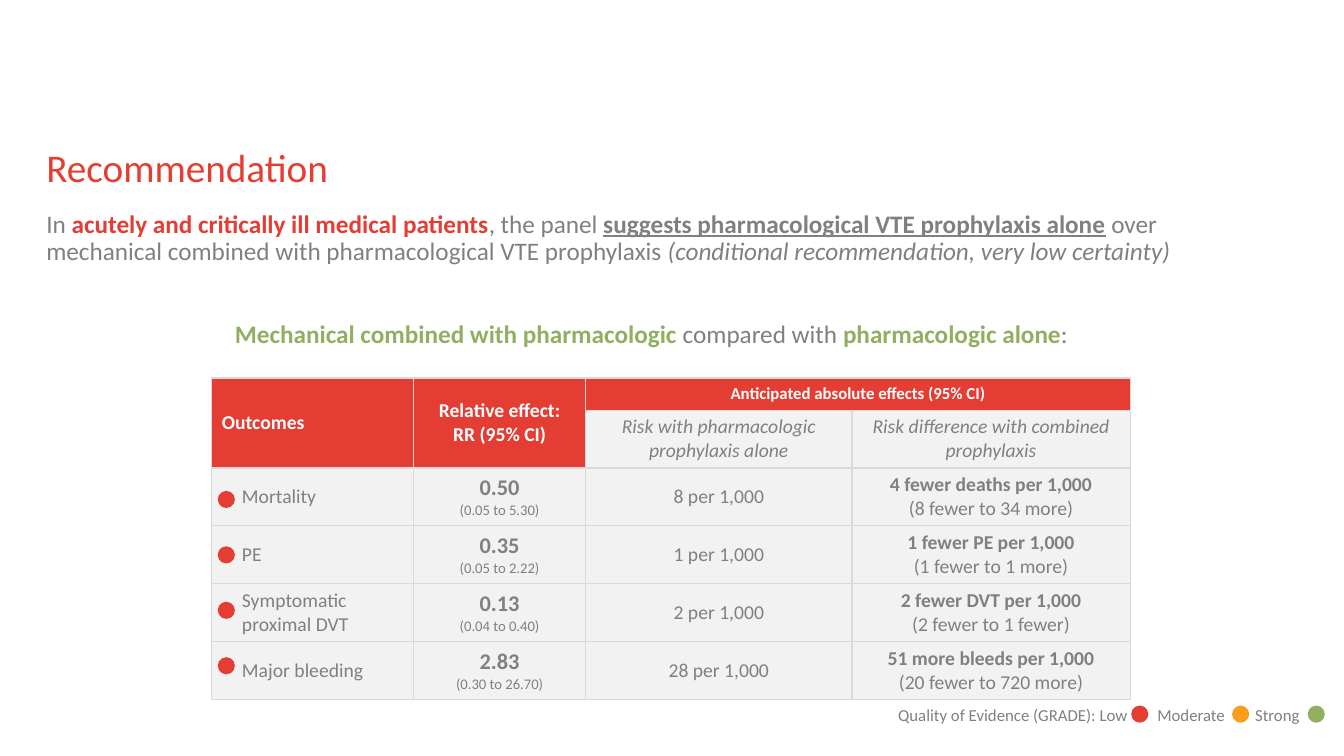
from lxml import etree
from pptx import Presentation
from pptx import util as u
from pptx.dml.color import RGBColor
from pptx.enum import shapes, text
from pptx.oxml import ns

COLORS = {"red": "E43D33", "title": "E53E31", "grey": "808080", "green": "91AF61",
          "white": "FFFFFF", "panel": "F2F2F2", "border": "D9D9D9",
          "low": "E43E32", "moderate": "F99D1C", "strong": "91AF5F"}
FONT = "Calibri"

TITLE = "Recommendation"
STATEMENT = [
    ("In ", "grey", ""),
    ("acutely and critically ill medical patients", "red", "b"),
    (", the panel ", "grey", ""),
    ("suggests pharmacological VTE prophylaxis alone", "grey", "bu"),
    (" over mechanical combined with pharmacological VTE prophylaxis ", "grey", ""),
    ("(conditional recommendation, very low certainty)", "grey", "i"),
]
COMPARISON = [
    ("Mechanical combined with pharmacologic ", "green", "b"),
    ("compared with ", "grey", ""),
    ("pharmacologic alone", "green", "b"),
    (":", "grey", ""),
]
HEADINGS = [
    (0, 0, ["Outcomes"], 14),
    (0, 1, ["Relative effect:", "RR (95% CI)"], 14),
    (0, 2, ["Anticipated absolute effects (95% CI)"], 12),
]
SUBHEADINGS = ["Risk with pharmacologic prophylaxis alone",
               "Risk difference with combined prophylaxis"]
OUTCOMES = [
    ("Mortality", "0.50", "(0.05 to 5.30)", "8 per 1,000",
     "4 fewer deaths per 1,000", "(8 fewer to 34 more)"),
    ("PE", "0.35", "(0.05 to 2.22)", "1 per 1,000",
     "1 fewer PE per 1,000", "(1 fewer to 1 more)"),
    ("Symptomatic proximal DVT", "0.13", "(0.04 to 0.40)", "2 per 1,000",
     "2 fewer DVT per 1,000", "(2 fewer to 1 fewer)"),
    ("Major bleeding", "2.83", "(0.30 to 26.70)", "28 per 1,000",
     "51 more bleeds per 1,000", "(20 fewer to 720 more)"),
]
LEGEND = "Quality of Evidence (GRADE): Low\tModerate\tStrong"
LEGEND_TABS = [2.57, 3.54]
LEGEND_DOTS = [("low", 11.22), ("moderate", 12.22), ("strong", 12.97)]

MARGIN, CONTENT_WIDTH = 0.46, 12
TABLE_LEFT, TABLE_TOP = 2.1, 3.75
COLUMNS = [2, 1.71, 2.64, 2.76]
ROWS = [0.32] + [0.57] * 5
DOT, FIRST_DOT_TOP, DOT_PITCH = 0.17, 4.87, 0.55


def rgb(name):
    return RGBColor.from_string(COLORS[name])


def style(run, size, color, marks=""):
    run.font.name = FONT
    run.font.size = u.Pt(size)
    run.font.color.rgb = rgb(color)
    run.font.bold = "b" in marks
    run.font.italic = "i" in marks
    run.font.underline = "u" in marks


def clear_insets(frame):
    frame.margin_left = frame.margin_right = frame.margin_top = frame.margin_bottom = 0
    frame.vertical_anchor = text.MSO_ANCHOR.TOP
    frame.word_wrap = True


def fill_paragraph(paragraph, parts):
    paragraph.line_spacing = 0.9
    for words, color, marks in parts:
        run = paragraph.add_run()
        run.text = words
        style(run, 18, color, marks)


def fill_cell(cell, lines, fill, centred=True, indent=0.1):
    cell.fill.solid()
    cell.fill.fore_color.rgb = rgb(fill)
    cell.vertical_anchor = text.MSO_ANCHOR.MIDDLE
    cell.margin_left = u.Inches(indent)
    cell.text_frame.text = "\n".join(line[0] for line in lines)
    for paragraph, (_, size, color, marks) in zip(cell.text_frame.paragraphs, lines):
        paragraph.alignment = text.PP_ALIGN.CENTER if centred else text.PP_ALIGN.LEFT
        for run in paragraph.runs:
            style(run, size, color, marks)


def add_borders(cell):
    properties = cell._tc.get_or_add_tcPr()
    for place, side in enumerate(("a:lnL", "a:lnR", "a:lnT", "a:lnB")):
        line = etree.Element(ns.qn(side), w=str(u.Pt(1)))
        solid = etree.SubElement(line, ns.qn("a:solidFill"))
        etree.SubElement(solid, ns.qn("a:srgbClr"), val=COLORS["border"])
        properties.insert(place, line)


def add_dot(parent, left, top, color):
    dot = parent.add_shape(shapes.MSO_SHAPE.OVAL, u.Inches(left), u.Inches(top),
                           u.Inches(DOT), u.Inches(DOT))
    dot.shadow.inherit = False
    dot.fill.solid()
    dot.fill.fore_color.rgb = rgb(color)
    dot.line.fill.background()


def add_heading(slide):
    title = slide.shapes.title
    title.left, title.top = u.Inches(MARGIN), u.Inches(1.47)
    title.width, title.height = u.Inches(CONTENT_WIDTH), u.Inches(0.46)
    title.text_frame.text = TITLE
    clear_insets(title.text_frame)
    heading = title.text_frame.paragraphs[0]
    heading.alignment = text.PP_ALIGN.LEFT
    heading.line_spacing = 0.9
    style(heading.runs[0], 28, "title")


def add_recommendation(slide):
    frame = slide.shapes.add_textbox(u.Inches(MARGIN), u.Inches(2.1),
                                     u.Inches(CONTENT_WIDTH), u.Inches(1.48)).text_frame
    clear_insets(frame)
    fill_paragraph(frame.paragraphs[0], STATEMENT)
    comparison = frame.add_paragraph()
    comparison.alignment = text.PP_ALIGN.CENTER
    comparison.space_before = u.Pt(40)
    fill_paragraph(comparison, COMPARISON)


def add_outcomes(slide):
    outcomes = slide.shapes.add_table(
        len(ROWS), len(COLUMNS), u.Inches(TABLE_LEFT), u.Inches(TABLE_TOP),
        u.Inches(sum(COLUMNS)), u.Inches(sum(ROWS))).table
    outcomes.first_row = outcomes.horz_banding = False
    for column, width in zip(outcomes.columns, COLUMNS):
        column.width = u.Inches(width)
    for row, height in zip(outcomes.rows, ROWS):
        row.height = u.Inches(height)
    for first, last in (((0, 0), (1, 0)), ((0, 1), (1, 1)), ((0, 2), (0, 3))):
        outcomes.cell(*first).merge(outcomes.cell(*last))

    for row, column, lines, size in HEADINGS:
        fill_cell(outcomes.cell(row, column),
                  [(line, size, "white", "b") for line in lines], "red", column > 0)
    for column, words in enumerate(SUBHEADINGS, 2):
        fill_cell(outcomes.cell(1, column), [(words, 14, "grey", "i")], "panel")
    for row, (name, ratio, interval, risk, change, spread) in enumerate(OUTCOMES, 2):
        fill_cell(outcomes.cell(row, 0), [(name, 14, "grey", "")], "panel", False, 0.3)
        fill_cell(outcomes.cell(row, 1),
                  [(ratio, 16, "grey", "b"), (interval, 10.5, "grey", "")], "panel")
        fill_cell(outcomes.cell(row, 2), [(risk, 14, "grey", "")], "panel")
        fill_cell(outcomes.cell(row, 3),
                  [(change, 14, "grey", "b"), (spread, 14, "grey", "")], "panel")
    for cell in outcomes.iter_cells():
        add_borders(cell)


def add_legend(slide):
    legend = slide.shapes.add_group_shape()
    frame = legend.shapes.add_textbox(u.Inches(8.81), u.Inches(6.94),
                                      u.Inches(4.53), u.Inches(0.3)).text_frame
    frame.word_wrap = True
    label = frame.paragraphs[0]
    tabs = etree.SubElement(label._p.get_or_add_pPr(), ns.qn("a:tabLst"))
    for position in LEGEND_TABS:
        etree.SubElement(tabs, ns.qn("a:tab"), pos=str(u.Inches(position)), algn="l")
    label.text = LEGEND
    style(label.runs[0], 12, "grey")
    for grade, left in LEGEND_DOTS:
        add_dot(legend.shapes, left, 7, grade)


def main():
    deck = Presentation()
    deck.slide_width, deck.slide_height = u.Inches(13.33), u.Inches(7.5)
    slide = deck.slides.add_slide(deck.slide_layouts[5])
    add_outcomes(slide)
    add_heading(slide)
    add_recommendation(slide)
    add_legend(slide)
    for index in range(len(OUTCOMES)):
        add_dot(slide.shapes, TABLE_LEFT + 0.06, FIRST_DOT_TOP + index * DOT_PITCH, "red")
    deck.save("out.pptx")


if __name__ == "__main__":
    main()
